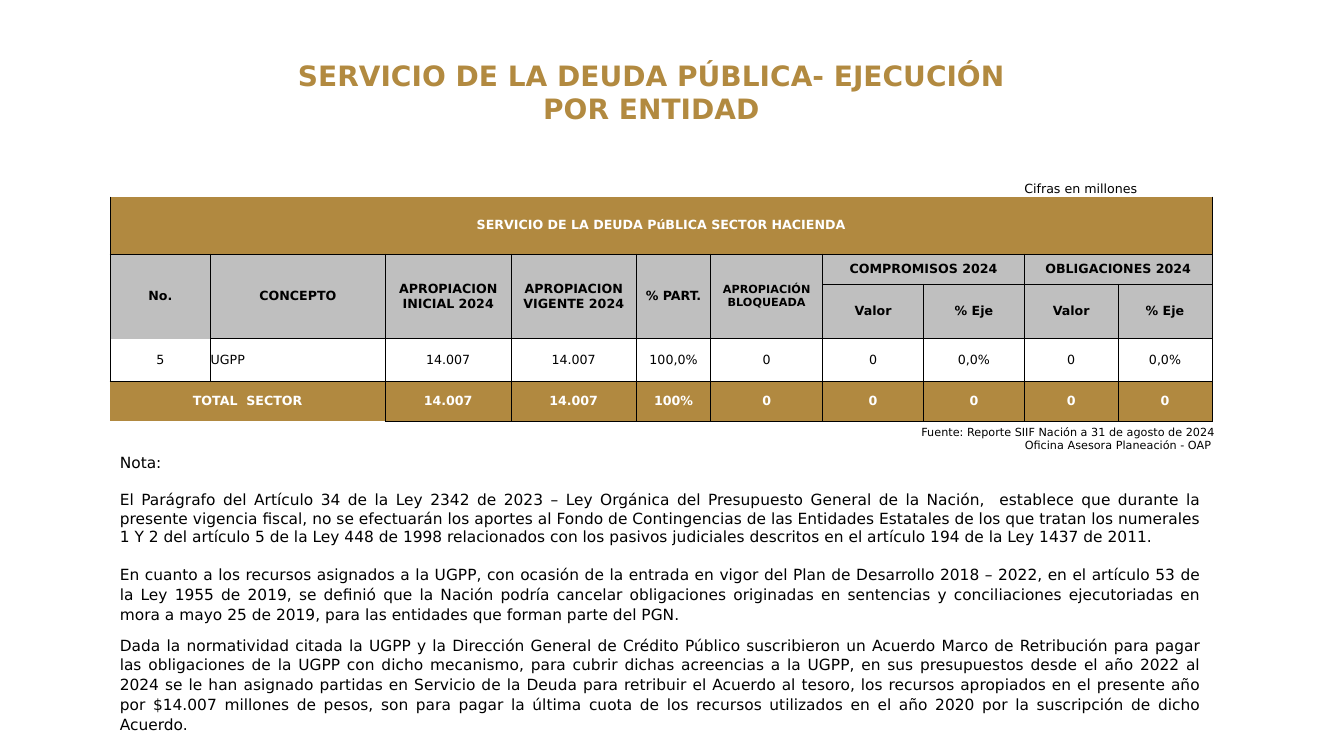
"""Build the slide on public debt service execution by entity."""
from lxml.etree import SubElement
from pptx import Presentation
from pptx.dml.color import RGBColor
from pptx.enum.text import MSO_ANCHOR, PP_ALIGN
from pptx.oxml.ns import qn
from pptx.util import Inches, Pt

GOLD, GRAY, WHITE, BLACK = "B18940", "BFBFBF", "FFFFFF", "000000"


def style(para, size, color, bold=False, align=PP_ALIGN.CENTER):
    para.alignment = align
    para.font.name = "DejaVu Sans"
    para.font.size = Pt(size)
    para.font.bold = bold
    para.font.color.rgb = RGBColor.from_string(color)


def add_text(page, place, texts, size, color, align, bold=False):
    box = page.shapes.add_textbox(*[Inches(value) for value in place])
    frame = box.text_frame
    frame.word_wrap = True
    frame.text = "\n".join(texts)
    for para in frame.paragraphs:
        style(para, size, color, bold, align)
    return frame.paragraphs


deck = Presentation()
deck.slide_width, deck.slide_height = Inches(13.33), Inches(7.5)
page = deck.slides.add_slide(deck.slide_layouts[6])

add_text(page, (2.67, 0.53, 7.58, 0.77),
         ["SERVICIO DE LA DEUDA PÚBLICA- EJECUCIÓN POR ENTIDAD"],
         20, "B28A40", PP_ALIGN.CENTER, True)

notes = add_text(page, (1.09, 4.45, 10.93, 2.99), [
    "Nota:",
    "El Parágrafo del Artículo 34 de la Ley 2342 de 2023 – Ley Orgánica del Presupuesto General de la Nación,  "
    "establece que durante la presente vigencia fiscal, no se efectuarán los aportes al Fondo de Contingencias "
    "de las Entidades Estatales de los que tratan los numerales 1 Y 2 del artículo 5 de la Ley 448 de 1998 "
    "relacionados con los pasivos judiciales descritos en el artículo 194 de la Ley 1437 de 2011.",
    "En cuanto a los recursos asignados a la UGPP, con ocasión de la entrada en vigor del Plan de Desarrollo "
    "2018 – 2022, en el artículo 53 de la Ley 1955 de 2019, se definió que la Nación podría cancelar "
    "obligaciones originadas en sentencias y conciliaciones ejecutoriadas en mora a mayo 25 de 2019, para las "
    "entidades que forman parte del PGN.",
    "Dada la normatividad citada la UGPP y la Dirección General de Crédito Público suscribieron un Acuerdo "
    "Marco de Retribución para pagar las obligaciones de la UGPP con dicho mecanismo, para cubrir dichas "
    "acreencias a la UGPP, en sus presupuestos desde el año 2022 al 2024 se le han asignado partidas en "
    "Servicio de la Deuda para retribuir el Acuerdo al tesoro, los recursos apropiados en el presente año por "
    "$14.007 millones de pesos, son para pagar la última cuota de los recursos utilizados en el año 2020 por "
    "la suscripción de dicho Acuerdo.",
], 11, BLACK, PP_ALIGN.JUSTIFY)
for para in notes[:2]:
    para.space_after = Pt(13)
for para in notes[2:]:
    para.line_spacing = 1.07
    para.space_after = Pt(8)

widths = [1, 1.73, 1.25, 1.24, 0.74, 1.11, 1, 1, 0.93, 0.93]
heights = [0.29, 0.57, 0.3, 0.54, 0.42, 0.4]
rows = [
    [""] * 8 + ["Cifras en millones", ""],
    ["SERVICIO DE LA DEUDA PúBLICA SECTOR HACIENDA"] + [""] * 9,
    ["No.", "CONCEPTO", "APROPIACION INICIAL 2024", "APROPIACION VIGENTE 2024", "% PART.",
     "APROPIACIÓN BLOQUEADA", "COMPROMISOS 2024", "", "OBLIGACIONES 2024", ""],
    [""] * 6 + ["Valor", "% Eje"] * 2,
    ["5", "UGPP", "14.007", "14.007", "100,0%", "0", "0", "0,0%", "0", "0,0%"],
    ["TOTAL  SECTOR", "", "14.007", "14.007", "100%"] + ["0"] * 5,
]
fills = [WHITE, GOLD, GRAY, GRAY, None, GOLD]
inks = [BLACK, WHITE, BLACK, BLACK, BLACK, WHITE]
open_edges = {(2, 0): "LRT", (3, 0): "LRT", (4, 0): "LRB", (5, 0): "TR", (5, 1): "TR"}
row_edges = {0: "", 1: "LRB"}

table = page.shapes.add_table(len(rows), len(widths), Inches(1.09), Inches(1.66),
                              Inches(10.93), Inches(2.52)).table
table.first_row = table.horz_banding = False
for column, width in zip(table.columns, widths):
    column.width = Inches(width)
for row, height in zip(table.rows, heights):
    row.height = Inches(height)

for r, texts in enumerate(rows):
    for c, text in enumerate(texts):
        cell = table.cell(r, c)
        cell.margin_left = cell.margin_right = cell.margin_top = cell.margin_bottom = 0
        cell.vertical_anchor = MSO_ANCHOR.MIDDLE if r else MSO_ANCHOR.BOTTOM
        cell.text = text
        style(cell.text_frame.paragraphs[0], 8 if (r, c) == (2, 5) else 9, inks[r], r not in (0, 4),
              PP_ALIGN.LEFT if r == 0 or (r, c) == (4, 1) else PP_ALIGN.CENTER)
        edges = open_edges.get((r, c), row_edges.get(r, "LRTB"))
        for side in "LRTB":
            line = SubElement(cell._tc.get_or_add_tcPr(), qn(f"a:ln{side}"), w=str(Pt(0.5)))
            if side in edges:
                SubElement(SubElement(line, qn("a:solidFill")), qn("a:srgbClr"), val=BLACK)
            else:
                SubElement(line, qn("a:noFill"))
        if fills[r]:
            cell.fill.solid()
            cell.fill.fore_color.rgb = RGBColor.from_string(fills[r])
        else:
            cell.fill.background()

spans = [(0, 8, 0, 9), (1, 0, 1, 9), (2, 6, 2, 7), (2, 8, 2, 9), (5, 0, 5, 1)]
spans += [(2, c, 3, c) for c in range(6)]
for top, left, bottom, right in spans:
    table.cell(top, left).merge(table.cell(bottom, right))

add_text(page, (7.98, 4.17, 4.17, 0.37),
         ["Fuente: Reporte SIIF Nación a 31 de agosto de 2024", "Oficina Asesora Planeación - OAP "],
         8, BLACK, PP_ALIGN.RIGHT)

deck.save("out.pptx")
